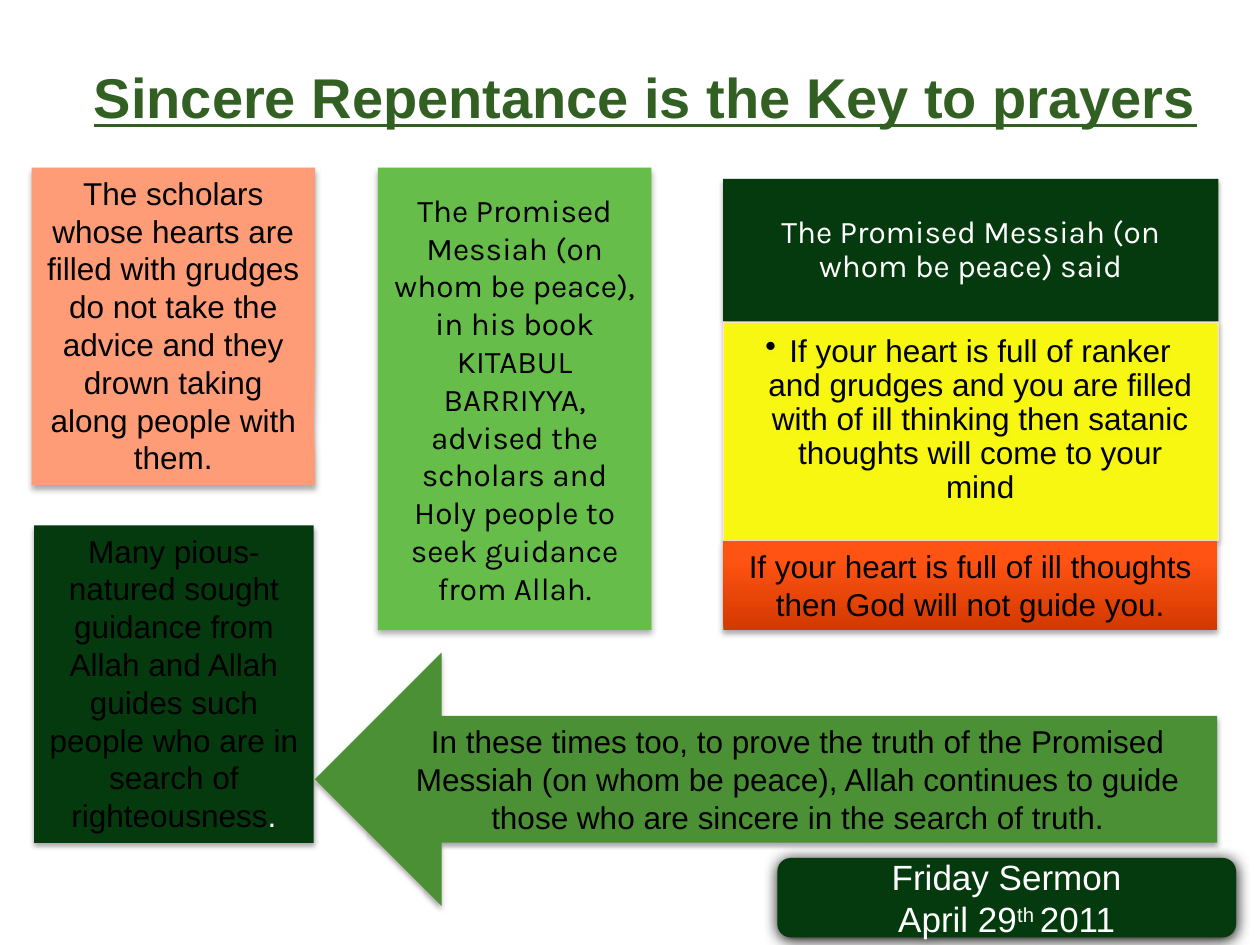
"""Build the slide on sincere repentance as the key to prayers."""
from lxml import etree
from pptx import Presentation
from pptx import util as u
from pptx.dml.color import RGBColor
from pptx.enum import shapes, text
from pptx.oxml.ns import qn

PX = 9144
BLACK = RGBColor(0x00, 0x00, 0x00)
WHITE = RGBColor(0xFF, 0xFF, 0xFF)
TITLE = RGBColor(0x32, 0x60, 0x23)
DARK = RGBColor(0x04, 0x3A, 0x0D)
LEAF = RGBColor(0x66, 0xBD, 0x49)
MOSS = RGBColor(0x4B, 0x90, 0x34)
PEACH = RGBColor(0xFE, 0x9C, 0x77)
GOLD = RGBColor(0xFF, 0xFF, 0x00)
CREAM = RGBColor(0xFF, 0xE4, 0xCC)
RUST = RGBColor(0xD3, 0x39, 0x00)
FLAME = RGBColor(0xFF, 0x53, 0x13)
KIND = shapes.MSO_SHAPE
TOP, MID = text.MSO_ANCHOR.TOP, text.MSO_ANCHOR.MIDDLE
SOFT, WIDE, DEEP = (35, 3.1, 1.8), (32, 3.5, 2.2), (100, 8.5, 1)


def style(para, face, size, ink):
    para.alignment = text.PP_ALIGN.CENTER
    para.font.name = face
    para.font.size = u.Pt(size)
    para.font.color.rgb = ink


def add_box(kind, place, fill, shade, words, ink=BLACK, face="Arial", hold=TOP):
    box = slide.shapes.add_shape(kind, *[n * PX for n in place])
    box.fill.solid()
    box.fill.fore_color.rgb = fill
    box.line.fill.background()
    box.shadow.inherit = False
    alpha, blur, dist = shade
    glow = etree.SubElement(
        box._element.spPr.find(qn("a:effectLst")), qn("a:outerShdw"),
        blurRad=str(u.Pt(blur)), dist=str(u.Pt(dist)), dir="5400000", rotWithShape="0")
    tint = etree.SubElement(glow, qn("a:srgbClr"), val=str(BLACK))
    etree.SubElement(tint, qn("a:alpha"), val=str(alpha * 1000))
    frame = box.text_frame
    frame.word_wrap = True
    frame.vertical_anchor = hold
    para = frame.paragraphs[0]
    para.add_run().text = words
    style(para, face, 18, ink)
    return box


deck = Presentation()
deck.slide_width, deck.slide_height = 1000 * PX, 750 * PX
slide = deck.slides.add_slide(deck.slide_layouts[6])

head = slide.shapes.add_textbox(50 * PX, 50 * PX, 900 * PX, 100 * PX).text_frame
head.word_wrap = True
head.margin_left = head.margin_right = head.margin_top = head.margin_bottom = 0
para = head.paragraphs[0]
para.text = "Sincere Repentance is the Key to prayers"
style(para, "Arial", 32, TITLE)
para.alignment = text.PP_ALIGN.RIGHT
para.font.bold = para.font.underline = True

said = add_box(KIND.RECTANGLE, (574, 142, 393, 113), DARK, SOFT,
               "The Promised Messiah (on whom be peace) said", WHITE, "Karla", MID)
mind = add_box(KIND.RECTANGLE, (574, 256, 393, 173), GOLD, SOFT,
               "If your heart is full of ranker and grudges and you are filled with of "
               "ill thinking then satanic thoughts will come to your mind")
mind.line.color.rgb = CREAM
mind.line.width = u.Pt(0.75)
for tint in mind._element.spPr.findall(".//" + qn("a:solidFill") + "/" + qn("a:srgbClr")):
    etree.SubElement(tint, qn("a:alpha"), val="90000")
for box, sides in ((said, (14, 8, 14, 8)), (mind, (10, 10, 14, 16))):
    frame = box.text_frame
    (frame.margin_left, frame.margin_top,
     frame.margin_right, frame.margin_bottom) = [n * PX for n in sides]
    frame.paragraphs[0].line_spacing = 0.9
para = mind.text_frame.paragraphs[0]
para.level = 1
props = para._p.get_or_add_pPr()
props.set("marL", str(19 * PX))
props.set("indent", str(-19 * PX))
dot = etree.Element(qn("a:buChar"), char="•")
props.find(qn("a:lnSpc")).addnext(dot)

guide = add_box(KIND.RECTANGLE, (574, 429, 392, 71), FLAME, SOFT,
                "If your heart is full of ill thoughts then God will not guide you.")
guide.fill.gradient()
guide.fill.gradient_angle = 90
for stop, hue, spot in zip(guide.fill.gradient_stops, (RUST, FLAME), (0, 0.8)):
    stop.color.rgb = hue
    stop.position = spot

grudge = add_box(KIND.RECTANGULAR_CALLOUT, (25, 133, 225, 252), PEACH, WIDE,
                 "The scholars whose hearts are filled with grudges do not take the "
                 "advice and they drown taking along people with them.")
grudge.adjustments[0], grudge.adjustments[1] = 0.495, 0.441

pious = add_box(KIND.RECTANGLE, (27, 417, 222, 252), DARK, SOFT,
                "Many pious-natured sought guidance from Allah and Allah guides such "
                "people who are in search of righteousness")
end = pious.text_frame.paragraphs[0].add_run()
end.text = "."
end.font.color.rgb = WHITE

add_box(KIND.LEFT_ARROW, (250, 518, 716, 201), MOSS, SOFT,
        "In these times too, to prove the truth of the Promised Messiah (on whom be "
        "peace), Allah continues to guide those who are sincere in the search of truth.")

date = add_box(KIND.ROUNDED_RECTANGLE, (617, 681, 364, 63), DARK, DEEP,
               "Friday Sermon", WHITE, hold=MID).text_frame
para = date.add_paragraph()
for words in ("April 29", "th ", "2011"):
    run = para.add_run()
    run.text = words
    if words == "th ":
        run.font._element.set("baseline", "30000")
for para in date.paragraphs:
    style(para, "Arial", 20, WHITE)

add_box(KIND.RECTANGLE, (300, 133, 217, 367), LEAF, WIDE,
        "The Promised Messiah (on whom be peace), in his book KITABUL BARRIYYA, "
        "advised the scholars and Holy people to seek guidance from Allah.",
        face="Karla", hold=MID)

deck.save("out.pptx")
